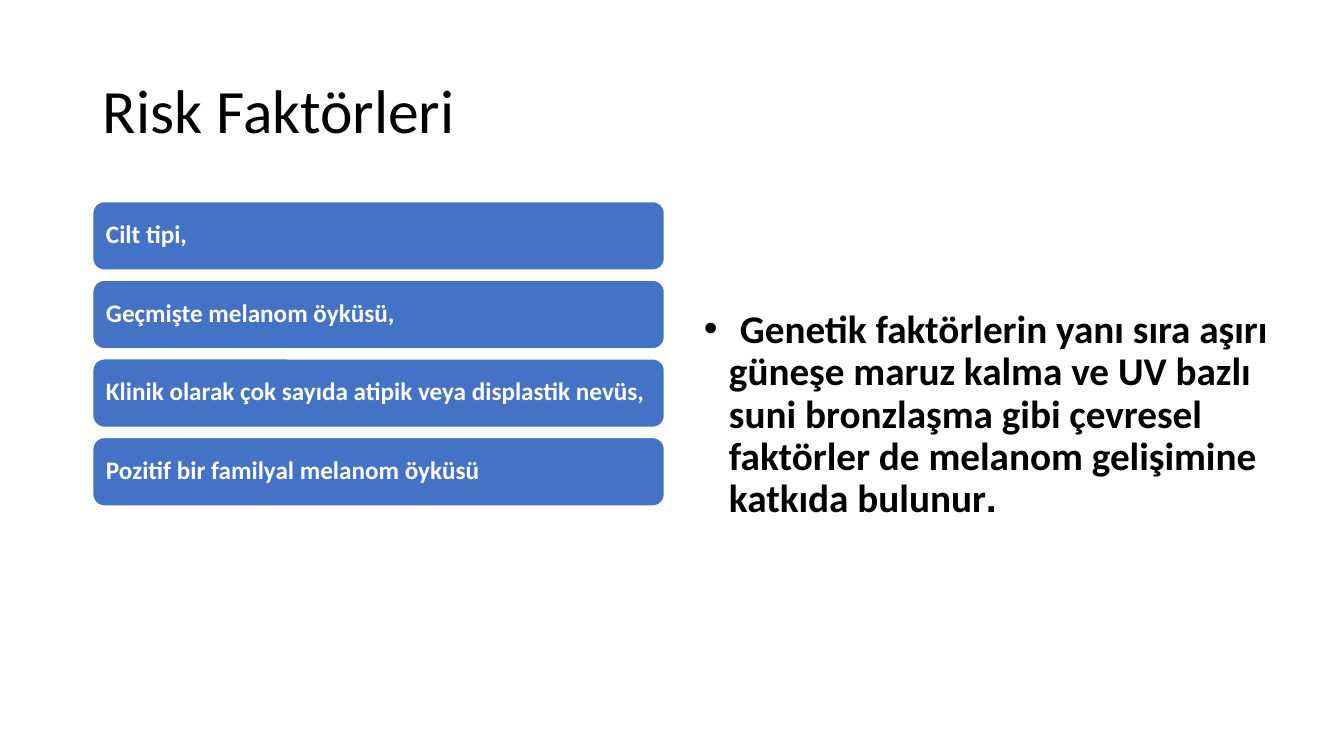
from pptx import Presentation
from pptx.dml.color import RGBColor
from pptx.enum.shapes import MSO_SHAPE as Preset
from pptx.enum.text import MSO_ANCHOR as Anchor, MSO_AUTO_SIZE as AutoSize, PP_ALIGN as Align
from pptx.oxml.ns import qn
from pptx.util import Inches, Pt

BLACK, WHITE, BLUE = "000000", "FFFFFF", "4472C4"
RISKS = [
    "Cilt tipi, ",
    "Geçmişte melanom öyküsü, ",
    "Klinik olarak çok sayıda atipik veya displastik nevüs, ",
    "Pozitif bir familyal melanom öyküsü",
]
ENVIRONMENT = [
    (" ", "Arial"),
    ("Genetik faktörlerin yanı sıra aşırı güneşe maruz kalma ve UV bazlı suni "
     "bronzlaşma gibi çevresel faktörler de melanom gelişimine katkıda bulunur", "Calibri"),
    (".", "Arial"),
]


def color(value):
    return RGBColor.from_string(value)


def apply(target, values):
    for name, value in values.items():
        setattr(target, name, value)


def place(box, left, top, width, height):
    apply(box, {"left": Inches(left), "top": Inches(top),
                "width": Inches(width), "height": Inches(height)})


def write(box, spans, size, ink, bold, spacing, anchor):
    """Fill a shape with one paragraph of (text, font) spans."""
    apply(box.text_frame, {"word_wrap": True, "auto_size": AutoSize.NONE,
                           "vertical_anchor": anchor})
    para = box.text_frame.paragraphs[0]
    apply(para, {"alignment": Align.LEFT, "line_spacing": spacing, "space_before": Pt(0)})
    for text, font in spans:
        span = para.add_run()
        span.text = text
        apply(span.font, {"name": font, "size": Pt(size), "bold": bold})
        span.font.color.rgb = color(ink)
    return para


def add_risk(page, text, top):
    box = page.shapes.add_shape(Preset.ROUNDED_RECTANGLE, Inches(0.92), Inches(top),
                                Inches(5.67), Inches(0.68))
    box.shadow.inherit = False
    box.fill.solid()
    box.fill.fore_color.rgb = color(BLUE)
    box.line.color.rgb = color(WHITE)
    box.line.width = Pt(1)
    write(box, [(text, "Calibri")], 18, WHITE, True, 0.85, Anchor.MIDDLE)


def set_bullet(para):
    props = para._p.get_or_add_pPr()
    props.set("marL", str(Inches(0.25)))
    props.set("indent", str(Inches(-0.25)))
    font = props.makeelement(qn("a:buFont"), {"typeface": "Arial"})
    mark = props.makeelement(qn("a:buChar"), {"char": "•"})
    props.extend([font, mark])


def main():
    deck = Presentation()
    apply(deck, {"slide_width": Inches(13.33), "slide_height": Inches(7.5)})
    page = deck.slides.add_slide(deck.slide_layouts[1])

    # Title
    title = page.shapes.title
    place(title, 0.92, 0.4, 11.5, 1.45)
    write(title, [("Risk Faktörleri", "Calibri")], 44, BLACK, False, 0.9, Anchor.MIDDLE)

    # Stack of risk factors
    for row, risk in enumerate(RISKS):
        add_risk(page, risk, 2 + row * 0.78)

    # Environmental factors
    body = page.placeholders[1]
    place(body, 6.88, 3.02, 6.16, 4.9)
    set_bullet(write(body, ENVIRONMENT, 28, BLACK, True, 0.9, Anchor.TOP))

    deck.save("out.pptx")


if __name__ == "__main__":
    main()
